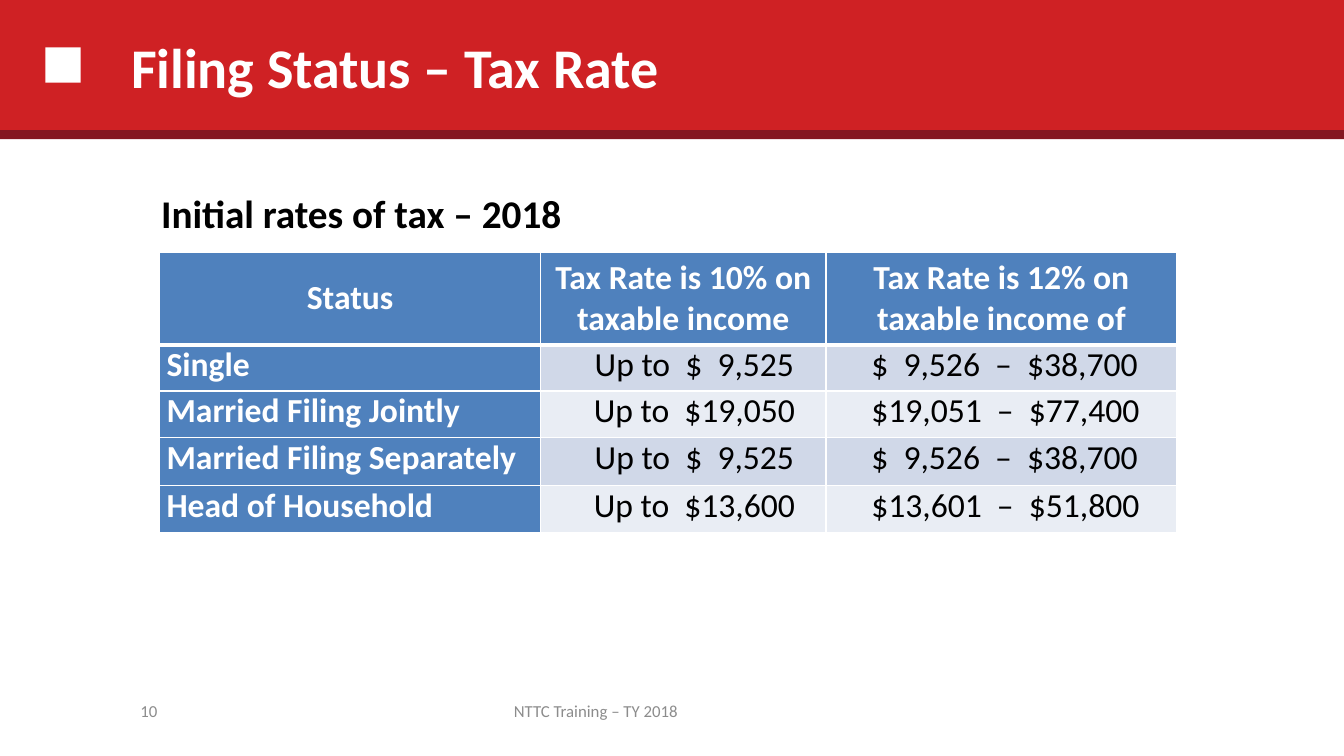
from lxml import etree
from pptx import Presentation
from pptx.dml.color import RGBColor
from pptx.enum.shapes import MSO_SHAPE
from pptx.enum.text import MSO_ANCHOR, PP_ALIGN
from pptx.oxml.ns import qn
from pptx.util import Inches, Pt

SLIDE_WIDTH, SLIDE_HEIGHT = Inches(13.33), Inches(7.5)
WHITE = RGBColor(0xFF, 0xFF, 0xFF)
BLACK = RGBColor(0x00, 0x00, 0x00)
GREY = RGBColor(0x8C, 0x8C, 0x8C)
RED = RGBColor(0xCF, 0x21, 0x24)
DARK_RED = RGBColor(0x84, 0x17, 0x21)
BLUE = RGBColor(0x4F, 0x81, 0xBD)
BANDS = (RGBColor(0xD0, 0xD8, 0xE8), RGBColor(0xE9, 0xED, 0xF4))

TITLE_FONT = {"size": Pt(40), "bold": True}
HEADING_FONT = {"size": Pt(28), "bold": True}
LABEL_FONT = {"size": Pt(24), "bold": True}
VALUE_FONT = {"size": Pt(24), "bold": False}
FOOTER_FONT = {"size": Pt(12), "bold": False}

WIDE_INSETS = {"margin_left": Inches(0.13), "margin_right": Inches(0.13),
               "margin_top": Inches(0.07), "margin_bottom": Inches(0.07),
               "vertical_anchor": MSO_ANCHOR.MIDDLE, "word_wrap": True}
COLUMN_WIDTHS = (3.78, 2.83, 3.48)
ROW_HEIGHTS = (0.92, 0.46, 0.46, 0.48, 0.46)
VALUE_INDENTS = (0.07, 0.29, 0.45)
VALUE_ALIGNMENTS = (PP_ALIGN.LEFT, PP_ALIGN.CENTER, PP_ALIGN.LEFT)
RATES = (
    ("Status", "Tax Rate is 10% on taxable income", "Tax Rate is 12% on taxable income of"),
    ("Single", "Up to  $  9,525", "$  9,526  –  $38,700"),
    ("Married Filing Jointly", "Up to  $19,050", "$19,051  –  $77,400"),
    ("Married Filing Separately", "Up to  $  9,525", "$  9,526  –  $38,700"),
    ("Head of Household", "Up to  $13,600", "$13,601  –  $51,800"),
)


def set_attributes(target, values):
    for name, value in values.items():
        setattr(target, name, value)


def place(left, top, width, height):
    """Turn percentages of the slide's size into lengths."""
    return (int(SLIDE_WIDTH * left / 100), int(SLIDE_HEIGHT * top / 100),
            int(SLIDE_WIDTH * width / 100), int(SLIDE_HEIGHT * height / 100))


def write(text_frame, text, font, color, alignment=PP_ALIGN.LEFT):
    text_frame.text = text
    paragraph = text_frame.paragraphs[0]
    paragraph.alignment = alignment
    run_font = paragraph.runs[0].font
    set_attributes(run_font, {"name": "Calibri", **font})
    run_font.color.rgb = color


def add_block(slide, area, color):
    shape = slide.shapes.add_shape(MSO_SHAPE.RECTANGLE, *place(*area))
    shape.shadow.inherit = False
    shape.fill.solid()
    shape.fill.fore_color.rgb = color
    shape.line.fill.background()


def add_title(slide, area, text):
    title = slide.shapes.title
    set_attributes(title, dict(zip(("left", "top", "width", "height"), place(*area))))
    set_attributes(title.text_frame, WIDE_INSETS)
    write(title.text_frame, text, TITLE_FONT, WHITE)
    slide.shapes.element.append(title.element)  # in front of the red band


def add_text(slide, area, text, font, color, alignment=PP_ALIGN.LEFT, frame=None):
    text_frame = slide.shapes.add_textbox(*place(*area)).text_frame
    set_attributes(text_frame, frame or {"word_wrap": True})
    write(text_frame, text, font, color, alignment)


def add_borders(cell, widths):
    """Draw white borders; widths are points for left, right, top, bottom."""
    properties = cell._tc.get_or_add_tcPr()
    for index, (side, width) in enumerate(zip("LRTB", widths)):
        line = etree.Element(qn(f"a:ln{side}"), w=str(Pt(width)))
        fill = etree.SubElement(line, qn("a:solidFill"))
        etree.SubElement(fill, qn("a:srgbClr"), val=str(WHITE))
        properties.insert(index, line)


def fill_cell(cell, text, row, column):
    is_header, is_label = row == 0, column == 0
    strong = is_header or is_label
    set_attributes(cell, {
        "margin_left": Inches(0.07 if is_header else VALUE_INDENTS[column]),
        "margin_right": Inches(0.07), "margin_top": 0, "margin_bottom": 0,
        "vertical_anchor": MSO_ANCHOR.MIDDLE if is_header else MSO_ANCHOR.TOP})
    cell.fill.solid()
    cell.fill.fore_color.rgb = BLUE if strong else BANDS[(row - 1) % 2]
    write(cell.text_frame, text, LABEL_FONT if strong else VALUE_FONT,
          WHITE if strong else BLACK,
          PP_ALIGN.CENTER if is_header else VALUE_ALIGNMENTS[column])
    add_borders(cell, (1, 1, 3 if row == 1 else 1, 3 if is_header else 1))


def add_rate_table(slide, area):
    table = slide.shapes.add_table(len(RATES), len(COLUMN_WIDTHS), *place(*area)).table
    for column, width in zip(table.columns, COLUMN_WIDTHS):
        column.width = Inches(width)
    for row, height in zip(table.rows, ROW_HEIGHTS):
        row.height = Inches(height)
    for row, texts in enumerate(RATES):
        for column, text in enumerate(texts):
            fill_cell(table.cell(row, column), text, row, column)


def main():
    presentation = Presentation()
    set_attributes(presentation, {"slide_width": SLIDE_WIDTH, "slide_height": SLIDE_HEIGHT})
    slide = presentation.slides.add_slide(presentation.slide_layouts.get_by_name("Title Only"))
    add_block(slide, (0, 0, 100, 17.6), RED)
    add_block(slide, (3.38, 6.27, 2.63, 4.67), WHITE)
    add_block(slide, (0, 17.2, 100, 1.2), DARK_RED)
    add_text(slide, (28.5, 91.33, 31.66, 5.33), "NTTC Training – TY 2018",
             FOOTER_FONT, GREY, PP_ALIGN.CENTER, WIDE_INSETS)
    add_text(slide, (5.03, 91.33, 7.65, 5.33), "10",
             FOOTER_FONT, GREY, PP_ALIGN.RIGHT, WIDE_INSETS)
    add_title(slide, (8.78, 0.4, 80, 16.67), "Filing Status – Tax Rate")
    add_rate_table(slide, (11.87, 33.33, 75.6, 37.2))
    add_text(slide, (11.25, 24.4, 33.75, 7.6), "Initial rates of tax – 2018", HEADING_FONT, BLACK)
    presentation.save("out.pptx")


if __name__ == "__main__":
    main()
